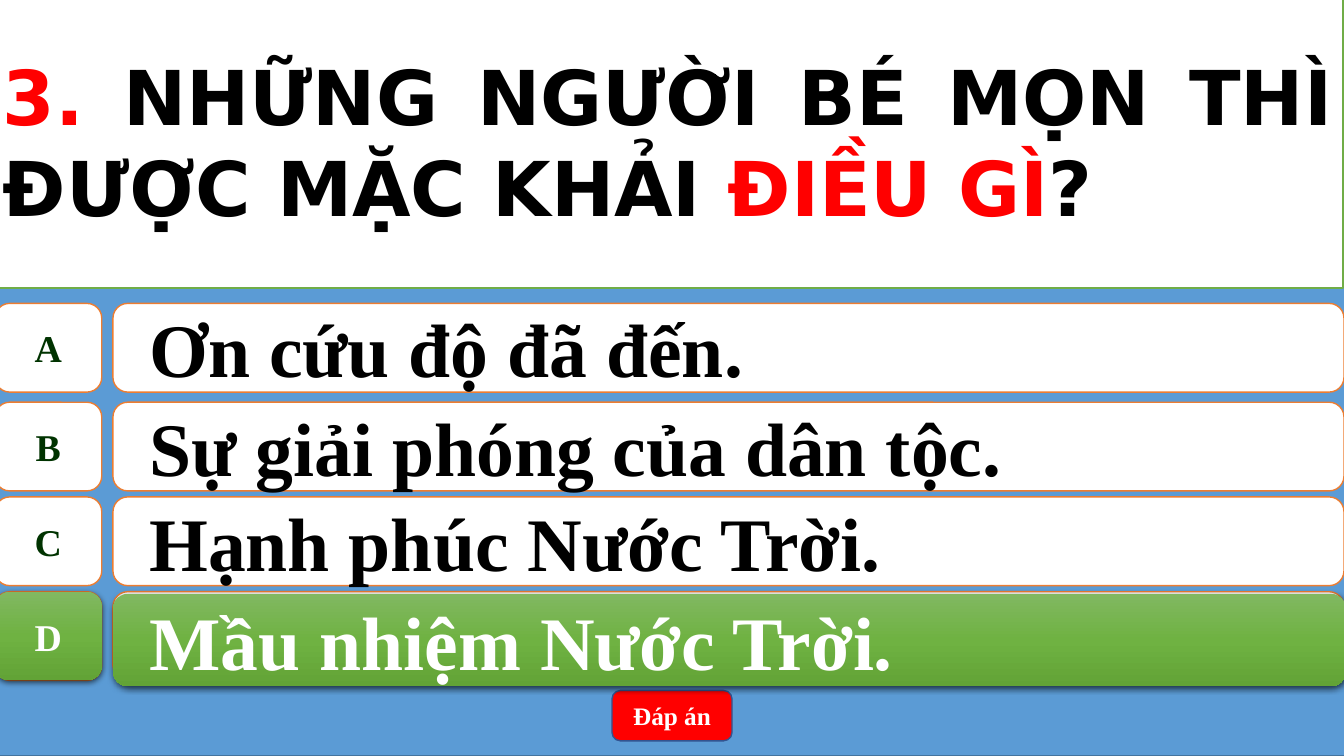
import copy

import pptx
import pptx.dml.color
import pptx.enum.shapes
import pptx.enum.text
import pptx.oxml
import pptx.oxml.ns
import pptx.util

SHAPE = pptx.enum.shapes.MSO_SHAPE
ALIGN = pptx.enum.text.PP_ALIGN
SERIF = "Times New Roman"
GREEN_STOPS = [(0, "81B861"), (0.5, "6FB242"), (1, "62A336")]
SHADOW = (
    f'<a:outerShdw {pptx.oxml.ns.nsdecls("a")} blurRad="57150" dist="19050" dir="5400000" '
    'algn="ctr" rotWithShape="0"><a:srgbClr val="000000"><a:alpha val="63000"/>'
    '</a:srgbClr></a:outerShdw>'
)

deck = pptx.Presentation()
deck.slide_width = pptx.util.Inches(13.33)
deck.slide_height = pptx.util.Inches(7.5)
slide = deck.slides.add_slide(deck.slide_layouts[6])


def rgb(code):
    return pptx.dml.color.RGBColor.from_string(code)


def add_panel(kind, box, fill, line, runs=(), size=54, font=SERIF, align=ALIGN.CENTER):
    """Add a shape with bold (text, colour) runs; no fill colour means the shaded green."""
    panel = slide.shapes.add_shape(kind, *map(pptx.util.Inches, box))
    panel.shadow.inherit = False
    if fill:
        panel.fill.solid()
        panel.fill.fore_color.rgb = rgb(fill)
        panel.line.color.rgb = rgb(line)
        panel.line.width = pptx.util.Pt(1)
    else:
        panel.line.fill.background()
        panel.fill.gradient()
        panel.fill.gradient_angle = 270
        properties = panel.element.spPr
        stops = properties.find(".//" + pptx.oxml.ns.qn("a:gsLst"))
        stops.append(copy.deepcopy(stops[0]))
        for stop, (position, code) in zip(panel.fill.gradient_stops, GREEN_STOPS):
            stop.position = position
            stop.color.rgb = rgb(code)
        effects = properties.find(pptx.oxml.ns.qn("a:effectLst"))
        effects.append(pptx.oxml.parse_xml(SHADOW))
    panel.text_frame.word_wrap = kind != SHAPE.FLOWCHART_ALTERNATE_PROCESS
    panel.text_frame.vertical_anchor = pptx.enum.text.MSO_ANCHOR.MIDDLE
    paragraph = panel.text_frame.paragraphs[0]
    paragraph.alignment = align
    for words, code in runs:
        run = paragraph.add_run()
        run.text = words
        run.font.name = font
        run.font.size = pptx.util.Pt(size)
        run.font.bold = True
        run.font.color.rgb = rgb(code)
    return panel


add_panel(SHAPE.RECTANGLE, (-0.05, 0, 13.39, 7.5), "5B9BD5", "43739E")
add_panel(SHAPE.ROUNDED_RECTANGLE, (6.07, 6.85, 1.19, 0.5), "FF0000", "325491",
          [("Đáp án", "FFFFFF")], size=18)

# The last row is the correct answer, laid in green over an empty white row
row_height = 0.88
rows = [
    (3.01, "A", "Ơn cứu độ đã đến."),
    (3.99, "B", "Sự giải phóng của dân tộc."),
    (4.93, "C", "Hạnh phúc Nước Trời."),
    (5.87, "", ""),
    (5.87, "D", "Mầu nhiệm Nước Trời."),
]
for top, letter, answer in rows:
    correct = letter == "D"
    fill = None if correct else "FFFFFF"
    letter_color, answer_color = ("FFFFFF", "FFFFFF") if correct else ("003300", "000000")
    answer_box = (1.12, 5.89, 12.23, 0.92) if correct else (1.12, top, 12.21, row_height)
    add_panel(SHAPE.FLOWCHART_ALTERNATE_PROCESS, (-0.05, top, 1.06, row_height), fill, "ED7D31",
              [(letter, letter_color)] if letter else [], size=27)
    bar = add_panel(SHAPE.ROUNDED_RECTANGLE, answer_box, fill, "ED7D31",
                    [(answer, answer_color)] if answer else [], align=ALIGN.LEFT)
    if answer:
        indents = bar.text_frame.paragraphs[0]._p.get_or_add_pPr()
        indents.set("marL", str(pptx.util.Inches(0.5)))
        indents.set("indent", str(pptx.util.Inches(-0.28)))

add_panel(
    SHAPE.RECTANGLE, (-0.07, -0.07, 13.39, 2.93), "FFFFFF", "70AD47",
    [("3. ", "FF0000"), ("NHỮNG NGƯỜI BÉ MỌN THÌ ĐƯỢC MẶC KHẢI ", "000000"),
     ("ĐIỀU GÌ", "FF0000"), ("?", "000000")],
    font="DejaVu Sans", align=ALIGN.JUSTIFY)

deck.save("out.pptx")
